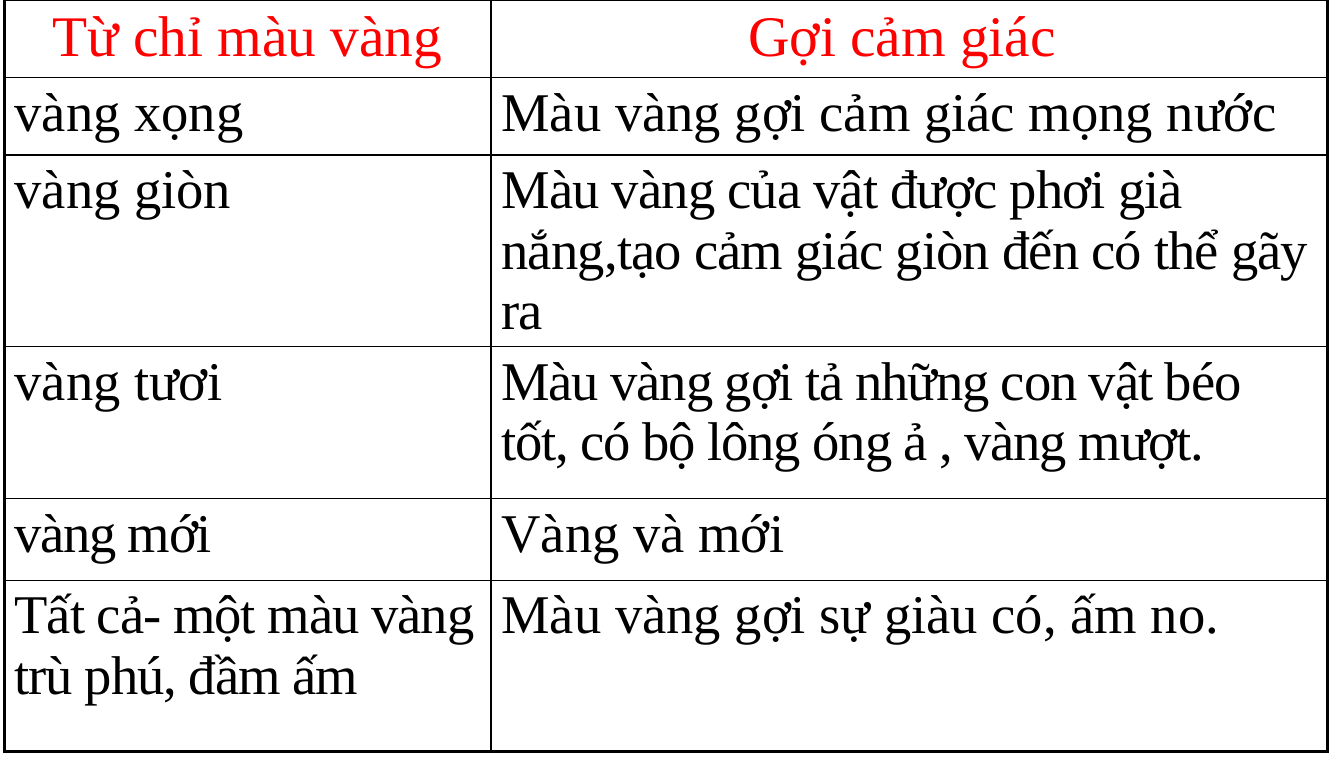
from lxml.etree import SubElement
from pptx import Presentation
from pptx.dml.color import RGBColor
from pptx.enum.text import PP_ALIGN as Align
from pptx.oxml.ns import qn
from pptx.util import Inches, Pt

RED = RGBColor(0xFF, 0, 0)
BLACK = RGBColor(0, 0, 0)
FONT = "Times New Roman"
THIN, THICK = Pt(1), Pt(2.25)

COLUMNS = [4.71, 8.09]
ROWS = [
    (0.75, ("Từ chỉ màu vàng", 0), ("Gợi cảm giác ", 0)),
    (0.75, ("vàng xọng", 0), ("Màu vàng gợi cảm giác mọng nước", 0)),
    (1.66, ("vàng giòn", 0),
     ("Màu vàng của vật được phơi già nắng,tạo cảm giác giòn đến có thể gãy ra", -0.6)),
    (1.47, ("vàng tươi", 0),
     ("Màu vàng gợi tả những con vật béo tốt, có bộ lông óng ả , vàng mượt.", -0.8)),
    (0.79, ("vàng mới", -0.9), ("Vàng và mới", 0)),
    (1.66, ("Tất cả- một màu vàng trù phú, đầm ấm", -0.7),
     ("Màu vàng gợi sự giàu có, ấm no.", 0)),
]


def set_borders(cell, edges):
    tcPr = cell._tc.get_or_add_tcPr()
    for i, (side, outer) in enumerate(edges.items()):
        ln = tcPr.makeelement(qn(f"a:{side}"), {"w": str(THICK if outer else THIN)})
        fill = SubElement(ln, qn("a:solidFill"))
        SubElement(fill, qn("a:srgbClr"), val=str(BLACK))
        tcPr.insert(i, ln)


def write_cell(cell, text, spacing, header):
    cell.fill.background()
    p = cell.text_frame.paragraphs[0]
    p.alignment = Align.CENTER if header else Align.LEFT
    p.font.name = FONT
    p.font.bold = False
    p.font.size = Pt(40 if header else 38)
    p.font.color.rgb = RED if header else BLACK
    r = p.add_run()
    r.text = text
    if spacing:
        r._r.get_or_add_rPr().set("spc", str(round(spacing * 100)))


prs = Presentation()
prs.slide_width, prs.slide_height = Inches(13), Inches(7.5)
s = prs.slides.add_slide(prs.slide_layouts[6])

height = sum(row[0] for row in ROWS)
table = s.shapes.add_table(
    len(ROWS), len(COLUMNS), Inches(0.04), 0, Inches(sum(COLUMNS)), Inches(height)
).table
table.first_row = table.horz_banding = False

for column, width in zip(table.columns, COLUMNS):
    column.width = Inches(width)

last_row, last_col = len(ROWS) - 1, len(COLUMNS) - 1
for i, (row_height, *entries) in enumerate(ROWS):
    table.rows[i].height = Inches(row_height)
    for j, (text, spacing) in enumerate(entries):
        cell = table.cell(i, j)
        write_cell(cell, text, spacing, header=i == 0)
        set_borders(cell, {"lnL": j == 0, "lnR": j == last_col,
                           "lnT": i == 0, "lnB": i == last_row})

prs.save("out.pptx")
